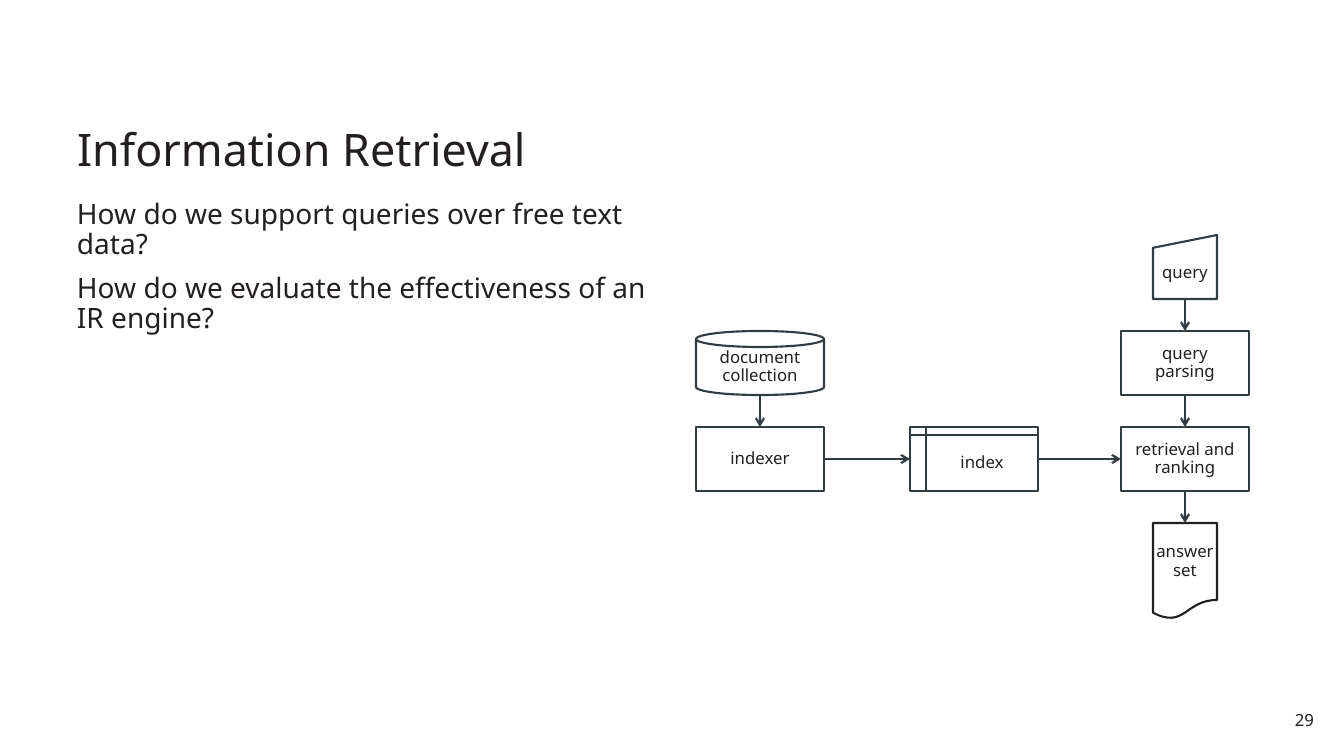
from lxml.etree import SubElement
from pptx import Presentation
from pptx.dml.color import RGBColor
from pptx.enum.shapes import MSO_CONNECTOR, MSO_SHAPE as Form
from pptx.enum.text import MSO_ANCHOR as Anchor, PP_ALIGN as Align
from pptx.oxml.ns import qn
from pptx.util import Pt

SCALE = 914400 / 100.8
COLORS = {"ink": "231F20", "line": "323D43", "paper": "FFFFFF"}
FONT = "Noto Sans"
TOP, LEFT, BOTTOM, RIGHT = range(4)


def px(num):
    return round(num * SCALE)


def color(name):
    return RGBColor.from_string(COLORS[name])


def write(frame, text, size, align=Align.LEFT, anchor=Anchor.TOP,
          pad=(8, 4), gap=0, lead=0.9):
    """Fill a frame with one paragraph per line of text."""
    frame.word_wrap = True
    frame.vertical_anchor = anchor
    frame.margin_left = frame.margin_right = px(pad[0])
    frame.margin_top = frame.margin_bottom = px(pad[1])
    frame.text = text
    for i, para in enumerate(frame.paragraphs):
        para.alignment = align
        para.line_spacing = lead
        para.space_before = Pt(gap if i else 0)
        for run in para.runs:
            run.font.size = Pt(size)
            run.font.name = FONT
            run.font.color.rgb = color("ink")


def add_title(slide, x, y, w, h):
    title = slide.shapes.title
    title.left, title.top, title.width, title.height = map(px, (x, y, w, h))
    write(title.text_frame, "Information Retrieval", 32, anchor=Anchor.BOTTOM)


def add_body(slide, x, y, w, h):
    box = slide.shapes.add_textbox(*map(px, (x, y, w, h)))
    text = ("How do we support queries over free text data?\n"
            "How do we evaluate the effectiveness of an IR engine?")
    write(box.text_frame, text, 20, gap=10)


def add_number(slide, x, y, w, h):
    box = slide.shapes.add_textbox(*map(px, (x, y, w, h)))
    write(box.text_frame, "29", 12, Align.RIGHT, pad=(8, 6), lead=1)


def add_node(slide, form, text, x, y, w, h, line="line"):
    node = slide.shapes.add_shape(form, *map(px, (x, y, w, h)))
    node.shadow.inherit = False
    node.fill.solid()
    node.fill.fore_color.rgb = color("paper")
    node.line.color.rgb = color(line)
    node.line.width = Pt(1.5)
    write(node.text_frame, text, 12, Align.CENTER, Anchor.MIDDLE, (0, 0))
    return node


def add_arrow(slide, start, end, down):
    """Link two nodes, downwards or to the right."""
    if down:
        spot = start.left + start.width // 2, start.top + start.height
    else:
        spot = start.left + start.width, start.top + start.height // 2
    arrow = slide.shapes.add_connector(MSO_CONNECTOR.STRAIGHT, *spot, *spot)
    # The sites of a can are numbered otherwise, so it is not joined.
    if start.auto_shape_type != Form.CAN:
        arrow.begin_connect(start, BOTTOM if down else RIGHT)
    arrow.end_connect(end, TOP if down else LEFT)
    arrow.line.color.rgb = color("line")
    arrow.line.width = Pt(1.5)
    props = arrow.line._get_or_add_ln()
    SubElement(props, qn("a:tailEnd"), type="arrow")
    SubElement(arrow._element.spPr, qn("a:effectLst"))


def add_flow(slide, x, y):
    """Place the flow chart with its top left corner at x, y."""
    wide, high, step = 128, 64, 96
    mid, far = x + 214, x + 425
    inset = far + (wide - high) // 2
    rows = [y + step * i for i in range(4)]
    box = Form.FLOWCHART_PROCESS

    docs = add_node(slide, Form.CAN, "document collection",
                    x, rows[1], wide, high)
    query = add_node(slide, Form.FLOWCHART_MANUAL_INPUT, "query",
                     inset, rows[0], high, high)
    parser = add_node(slide, box, "query\nparsing", far, rows[1], wide, high)
    ranker = add_node(slide, box, "retrieval and ranking",
                      far, rows[2], wide, high)
    maker = add_node(slide, box, "indexer", x, rows[2], wide, high)
    answer = add_node(slide, Form.FLOWCHART_DOCUMENT, "answer\vset",
                      inset, rows[3], high, step, "ink")
    index = add_node(slide, Form.FLOWCHART_INTERNAL_STORAGE, "index",
                     mid, rows[2], wide, high)

    for start, end in ((query, parser), (parser, ranker),
                       (ranker, answer), (docs, maker)):
        add_arrow(slide, start, end, True)
    for start, end in ((maker, index), (index, ranker)):
        add_arrow(slide, start, end, False)


def main():
    deck = Presentation()
    deck.slide_width, deck.slide_height = px(1344), px(756)
    slide = deck.slides.add_slide(deck.slide_layouts[5])
    add_title(slide, 69, 77, 1207, 103)
    add_body(slide, 69, 196, 596, 492)
    add_flow(slide, 696, 235)
    add_number(slide, 1275, 704, 47, 31)
    deck.save("out.pptx")


if __name__ == "__main__":
    main()
